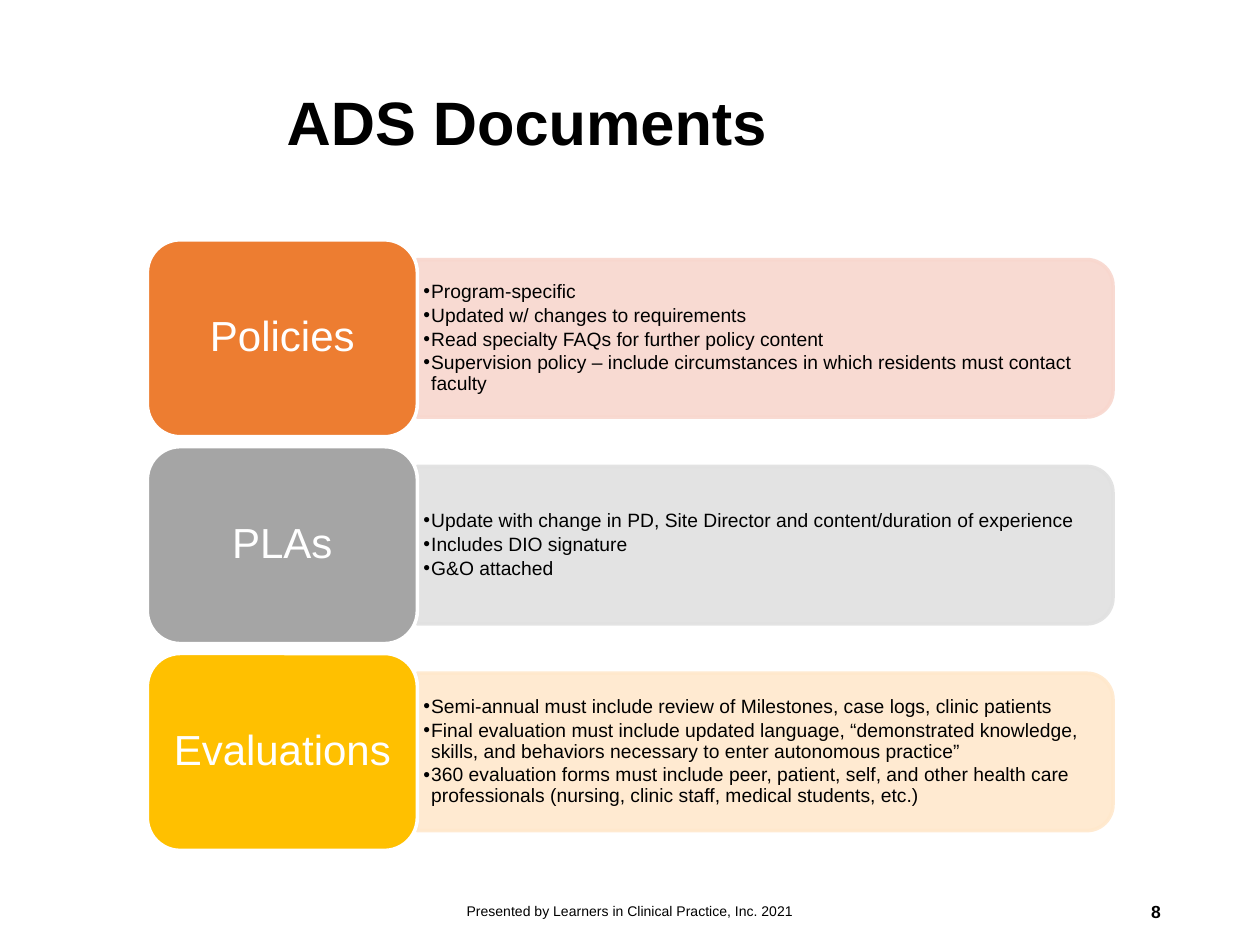
"""Build the ADS Documents slide: three document types, each with its requirements."""
from lxml.etree import SubElement
from pptx import Presentation
from pptx.dml.color import RGBColor
from pptx.enum.shapes import MSO_SHAPE
from pptx.enum.text import MSO_ANCHOR, PP_ALIGN
from pptx.oxml.ns import qn
from pptx.util import Pt

COLORS = {
    "text": "000000", "white": "FFFFFF",
    "Policies": "ED7D31", "Policies bar": "F8D7CE",
    "PLAs": "A5A5A5", "PLAs bar": "E1E1E1",
    "Evaluations": "FFC000", "Evaluations bar": "FFE8CC",
}
DOCUMENTS = {
    "Policies": [
        "Program-specific",
        "Updated w/ changes to requirements",
        "Read specialty FAQs for further policy content",
        "Supervision policy – include circumstances in which residents must contact faculty",
    ],
    "PLAs": [
        "Update with change in PD, Site Director and content/duration of experience",
        "Includes DIO signature",
        "G&O attached",
    ],
    "Evaluations": [
        "Semi-annual must include review of Milestones, case logs, clinic patients",
        "Final evaluation must include updated language, “demonstrated knowledge, "
        "skills, and behaviors necessary to enter autonomous practice”",
        "360 evaluation forms must include peer, patient, self, and other health care "
        "professionals (nursing, clinic staff, medical students, etc.)",
    ],
}
CARD_LEFT, CARD_WIDTH, CARD_HEIGHT = 84.2, 154.3, 112.5
BAR_LEFT, BAR_LENGTH, BAR_HEIGHT = 238.3, 397.7, 90
FIRST_MIDDLE, ROW_PITCH = 193.3, 118.2


def write(shape, lines, size, color, align, insets, bold=False):
    frame = shape.text_frame
    frame.word_wrap = True
    frame.vertical_anchor = MSO_ANCHOR.MIDDLE
    frame.margin_left = frame.margin_right = Pt(insets[0])
    frame.margin_top = frame.margin_bottom = Pt(insets[1])
    frame.text = "\n".join(lines)
    for paragraph in frame.paragraphs:
        paragraph.alignment = align
        for run in paragraph.runs:
            run.font.name = "Arial"
            run.font.size = Pt(size)
            run.font.bold = bold
            run.font.color.rgb = RGBColor.from_string(COLORS[color])
    return frame.paragraphs


def paint(shape, fill, line):
    shape.shadow.inherit = False
    shape.fill.solid()
    shape.fill.fore_color.rgb = RGBColor.from_string(COLORS[fill])
    shape.line.color.rgb = RGBColor.from_string(COLORS[line])
    shape.line.width = Pt(2)


prs = Presentation()
prs.slide_width, prs.slide_height = Pt(720), Pt(540)
slide = prs.slides.add_slide(prs.slide_layouts[5])
shapes = slide.shapes

title = shapes.title
title.left, title.top, title.width, title.height = Pt(156.6), Pt(19.4), Pt(514), Pt(104.4)
heading = write(title, ["ADS Documents"], 35, "text", PP_ALIGN.LEFT, (7.2, 7.2), bold=True)
heading[0].line_spacing = 0.9

for row, (document, requirements) in enumerate(DOCUMENTS.items()):
    middle = FIRST_MIDDLE + row * ROW_PITCH

    bar = shapes.add_shape(
        MSO_SHAPE.ROUND_2_SAME_RECTANGLE,
        Pt(BAR_LEFT + (BAR_LENGTH - BAR_HEIGHT) / 2), Pt(middle - BAR_LENGTH / 2),
        Pt(BAR_HEIGHT), Pt(BAR_LENGTH))
    bar.rotation = 90
    paint(bar, f"{document} bar", f"{document} bar")
    for bar_color in bar._element.spPr.iter(qn("a:srgbClr")):
        SubElement(bar_color, qn("a:alpha"), val="90000")

    details = shapes.add_textbox(Pt(BAR_LEFT), Pt(middle - 40.7), Pt(393), Pt(81.4))
    for item in write(details, requirements, 11, "text", PP_ALIGN.LEFT, (3.6, 1.6)):
        item.level = 1
        properties = item._p.get_or_add_pPr()
        properties.set("marL", str(Pt(4.5)))
        properties.set("indent", str(Pt(-4.5)))
        SubElement(properties, qn("a:buFont"), typeface="Arial")
        SubElement(properties, qn("a:buChar"), char="•")
        item.font.size = Pt(11)
        item.line_spacing = 0.9
        item.space_after = Pt(1.7)

    card = shapes.add_shape(
        MSO_SHAPE.ROUNDED_RECTANGLE, Pt(CARD_LEFT), Pt(middle - CARD_HEIGHT / 2),
        Pt(CARD_WIDTH), Pt(CARD_HEIGHT))
    paint(card, document, "white")
    label = write(card, [document], 24, "white", PP_ALIGN.CENTER, (5, 5))
    label[0].line_spacing = 0.9

footer = shapes.add_textbox(Pt(238.3), Pt(506.2), Pt(243.4), Pt(28.8))
write(footer, ["Presented by Learners in Clinical Practice, Inc. 2021"], 8, "text",
      PP_ALIGN.CENTER, (7.2, 3.6))
page_number = shapes.add_textbox(Pt(508.3), Pt(506.5), Pt(162), Pt(28.8))
write(page_number, ["8"], 10, "text", PP_ALIGN.RIGHT, (7.2, 3.6), bold=True)

prs.save("out.pptx")
